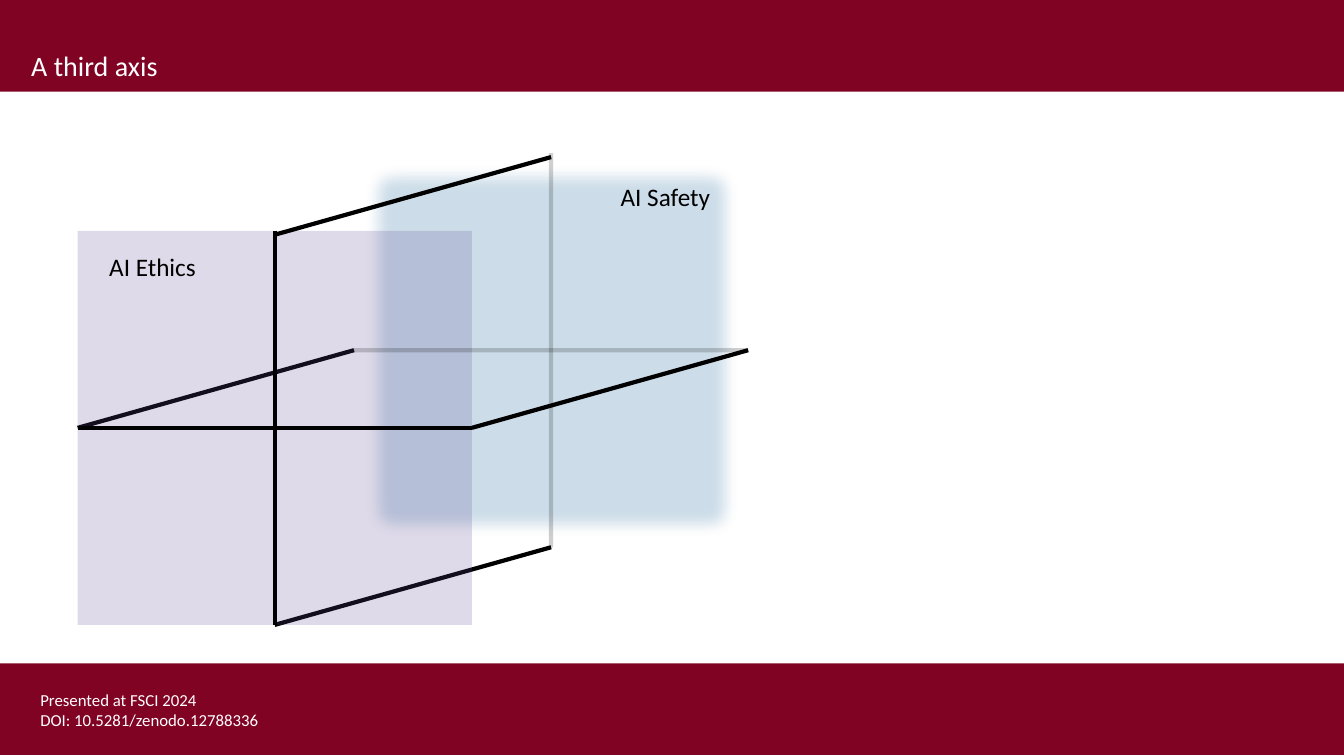
from dataclasses import dataclass

from lxml import etree
from pptx import Presentation
from pptx import util as u
from pptx.dml.color import RGBColor
from pptx.enum import shapes, text
from pptx.oxml import ns


@dataclass(frozen=True)
class Theme:
    font: str = "Calibri"
    band: str = "800323"
    ethics: str = "5C4791"
    safety: str = "005794"
    ink: str = "000000"
    paper: str = "FFFFFF"
    title_size: int = 20
    label_size: int = 18
    footer_size: int = 12
    axis_width: int = 3
    plane_opacity: int = 20
    far_opacity: int = 18
    soft_edge: float = 12.5


@dataclass(frozen=True)
class Box:
    left: float
    top: float
    width: float
    height: float

    def inner(self, x, y, width, height):
        """Return the inner box given as shares of this one."""
        return Box(*self.point(x, y), self.width * width, self.height * height)

    def point(self, x, y):
        return self.left + self.width * x, self.top + self.height * y

    def shifted(self, dx, dy):
        return Box(self.left + dx, self.top + dy, self.width, self.height)

    def emu(self):
        return [u.Inches(v) for v in (self.left, self.top, self.width, self.height)]


THEME = Theme()
PAGE = Box(0, 0, 13.33, 7.5)
PERCENT = PAGE.width / 100, PAGE.height / 100


def page_box(left, top, width, height):
    """Return a box given in percent of the slide's width and height."""
    return PAGE.inner(left / 100, top / 100, width / 100, height / 100)


def colour(value):
    return RGBColor.from_string(value)


def set_opacity(properties, percent):
    """Make the first solid colour within the properties see-through."""
    tone = properties.find(".//" + ns.qn("a:srgbClr"))
    etree.SubElement(tone, ns.qn("a:alpha"), val=str(percent * 1000))


def add_span(para, words, size, tone):
    span = para.add_run()
    span.text = words
    span.font.name = THEME.font
    span.font.size = u.Pt(size)
    span.font.color.rgb = colour(tone)


def add_block(page, box, fill):
    block = page.shapes.add_shape(shapes.MSO_SHAPE.RECTANGLE, *box.emu())
    block.shadow.inherit = False
    block.fill.solid()
    block.fill.fore_color.rgb = colour(fill)
    block.line.fill.background()
    return block


def add_text_frame(page, box):
    frame = page.shapes.add_textbox(*box.emu()).text_frame
    frame.word_wrap = True
    return frame


def add_axis(holder, start, end, opacity=100):
    axis = holder.add_connector(
        shapes.MSO_CONNECTOR.STRAIGHT, *[u.Inches(v) for v in (*start, *end)]
    )
    axis.line.color.rgb = colour(THEME.ink)
    axis.line.width = u.Pt(THEME.axis_width)
    properties = axis._element.spPr
    if opacity < 100:
        set_opacity(properties, opacity)
    etree.SubElement(properties, ns.qn("a:effectLst"))


def add_cross(holder, box, opacity=100):
    add_axis(holder, box.point(0.5, 0), box.point(0.5, 1), opacity)
    add_axis(holder, box.point(0, 0.5), box.point(1, 0.5), opacity)


def add_plane(page, box, fill, soft=False):
    plane = add_block(page, box, fill)
    properties = plane._element.spPr
    set_opacity(properties, THEME.plane_opacity)
    if soft:
        effects = properties.find(ns.qn("a:effectLst"))
        etree.SubElement(
            effects, ns.qn("a:softEdge"), rad=str(u.Pt(THEME.soft_edge))
        )


def add_label(page, box, words):
    para = add_text_frame(page, box).paragraphs[0]
    para.alignment = text.PP_ALIGN.CENTER
    para.space_before = para.space_after = u.Pt(4)
    add_span(para, words, THEME.label_size, THEME.ink)


def add_title(page, box, words):
    title = page.shapes.title
    title.left, title.top, title.width, title.height = box.emu()
    title.fill.solid()
    title.fill.fore_color.rgb = colour(THEME.band)
    frame = title.text_frame
    frame.auto_size = text.MSO_AUTO_SIZE.NONE
    frame.vertical_anchor = text.MSO_ANCHOR.MIDDLE
    frame.margin_left = u.Inches(0.31)
    frame.margin_top = u.Inches(box.height * 0.43)
    frame.margin_bottom = 0
    para = frame.paragraphs[0]
    para.alignment = text.PP_ALIGN.LEFT
    add_span(para, words, THEME.title_size, THEME.paper)


def add_axes(page, front, depth):
    """Draw two crossed planes joined by lines that run back along a third axis."""
    back = front.shifted(*depth)

    def add_depth_lines(*anchors):
        for anchor in anchors:
            add_axis(page.shapes, front.point(*anchor), back.point(*anchor))

    add_depth_lines((0, 0.5), (0.5, 1))
    add_plane(page, back, THEME.safety, soft=True)
    add_plane(page, front, THEME.ethics)
    add_label(page, front.inner(-0.01, 0.04, 0.4, 0.1), "AI Ethics")
    add_cross(page.shapes.add_group_shape().shapes, front)
    add_cross(page.shapes, back, THEME.far_opacity)
    add_depth_lines((1, 0.5), (0.5, 0.01))
    add_label(page, back.inner(0.59, 0.06, 0.4, 0.1), "AI Safety")


def add_footer(page, box, lines):
    add_block(page, box, THEME.band)
    frame = add_text_frame(page, box.inner(0, 0.23, 0.35, 0.55))
    frame.margin_left = u.Inches(0.4)
    for number, line in enumerate(lines):
        para = frame.add_paragraph() if number else frame.paragraphs[0]
        add_span(para, line, THEME.footer_size, THEME.paper)


def main():
    deck = Presentation()
    deck.slide_width, deck.slide_height = u.Inches(PAGE.width), u.Inches(PAGE.height)
    page = deck.slides.add_slide(deck.slide_layouts.get_by_name("Title Only"))
    add_title(page, page_box(0, 0, 100, 12.13), "A third axis")
    depth = 20.56 * PERCENT[0], -10.27 * PERCENT[1]
    add_axes(page, page_box(5.78, 30.53, 29.33, 52.13), depth)
    add_footer(
        page,
        page_box(0, 87.73, 100, 12.13),
        ["Presented at FSCI 2024", "DOI: 10.5281/zenodo.12788336"],
    )
    deck.save("out.pptx")


if __name__ == "__main__":
    main()
